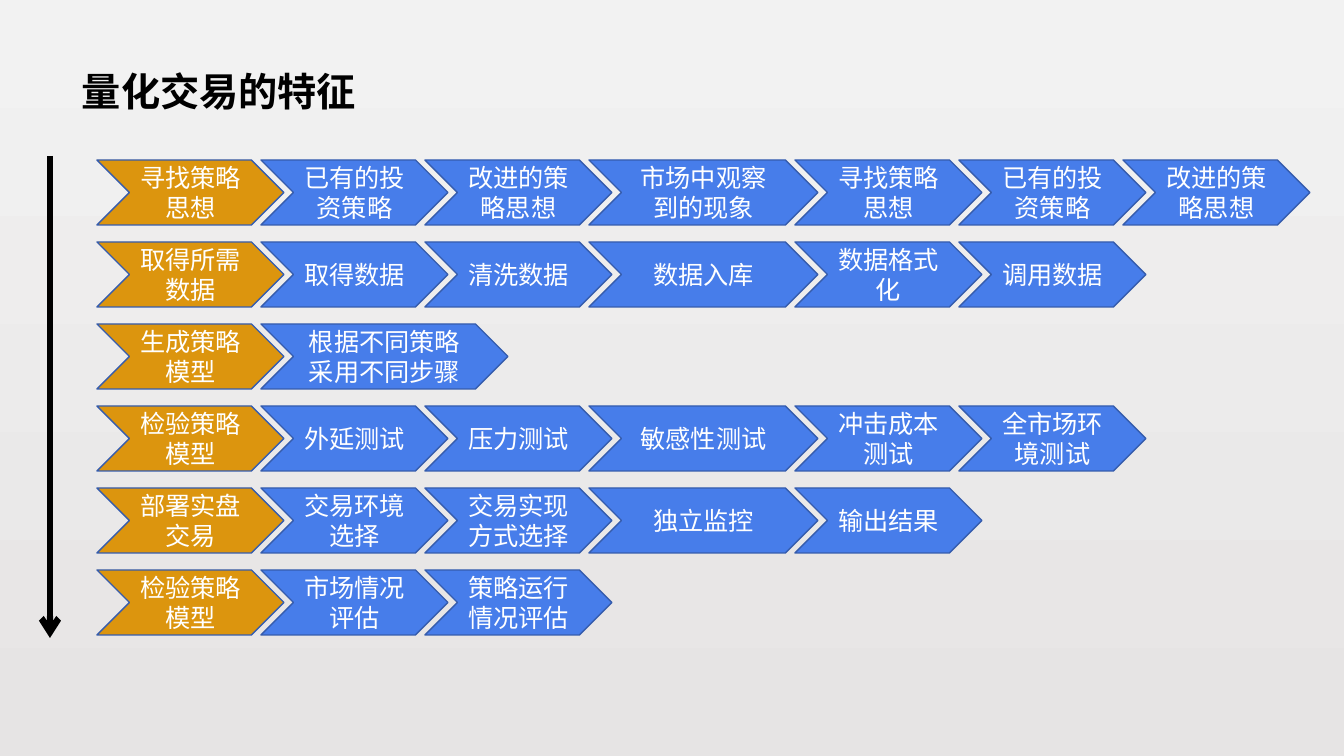
from lxml.etree import SubElement
from pptx import Presentation
from pptx.dml.color import RGBColor
from pptx.enum.shapes import MSO_CONNECTOR as Connector, MSO_SHAPE as Shape
from pptx.enum.text import MSO_ANCHOR as Anchor, PP_ALIGN as Align
from pptx.oxml.ns import qn
from pptx.util import Pt

EMU_PER_PX = 914400 / 100.8
BLACK = RGBColor(0x00, 0x00, 0x00)
WHITE = RGBColor(0xFF, 0xFF, 0xFF)
BLUE = RGBColor(0x47, 0x7D, 0xEA)
AMBER = RGBColor(0xDC, 0x95, 0x0E)
OUTLINE = RGBColor(0x35, 0x5C, 0xAD)
BACKDROP = RGBColor(0xF2, 0xF2, 0xF2), RGBColor(0xE6, 0xE4, 0xE4)

FIRST_LEFT, FIRST_TOP, ROW_PITCH = 97, 160, 82
STEP_WIDTH, STEP_HEIGHT, OVERLAP = 187, 65, 23
WIDE_STEPS = {"市场中观察到的现象": 229, "数据入库": 229, "敏感性测试": 229,
              "独立监控": 229, "根据不同策略采用不同步骤": 247}
STAGES = [
    ["寻找策略思想", "已有的投资策略", "改进的策略思想", "市场中观察到的现象",
     "寻找策略思想", "已有的投资策略", "改进的策略思想"],
    ["取得所需数据", "取得数据", "清洗数据", "数据入库", "数据格式化", "调用数据"],
    ["生成策略模型", "根据不同策略采用不同步骤"],
    ["检验策略模型", "外延测试", "压力测试", "敏感性测试", "冲击成本测试", "全市场环境测试"],
    ["部署实盘交易", "交易环境选择", "交易实现方式选择", "独立监控", "输出结果"],
    ["检验策略模型", "市场情况评估", "策略运行情况评估"],
]


def px(*lengths):
    """Turn pixel lengths into EMU."""
    return [round(length * EMU_PER_PX) for length in lengths]


class Deck:
    """Hold the style and the current slide, and draw its elements."""

    font_name = "Arial"

    def __init__(self, width, height):
        self.presentation = Presentation()
        self.presentation.slide_width, self.presentation.slide_height = px(width, height)
        self.slide = self.presentation.slides.add_slide(self.presentation.slide_layouts[6])

    def background(self, colors):
        fill = self.slide.background.fill
        fill.gradient()
        fill.gradient_angle = 270
        for position, (stop, color) in enumerate(zip(fill.gradient_stops, colors)):
            stop.color.rgb = color
            stop.position = position

    def set_text(self, frame, text, size, color, bold=False):
        frame.word_wrap = True
        frame.vertical_anchor = Anchor.MIDDLE
        paragraph = frame.paragraphs[0]
        paragraph.text = text
        font = paragraph.font
        font.name, font.size, font.bold = self.font_name, Pt(size), bold
        font.color.rgb = color
        return paragraph

    def title(self, text, left, top, width, height):
        heading = self.slide.shapes.add_textbox(*px(left, top, width, height))
        self.set_text(heading.text_frame, text, 28, BLACK, bold=True).line_spacing = 0.9

    def chevron(self, text, left, top, width, height, color):
        step = self.slide.shapes.add_shape(Shape.CHEVRON, *px(left, top, width, height))
        step.shadow.inherit = False
        step.fill.solid()
        step.fill.fore_color.rgb = color
        step.line.color.rgb = OUTLINE
        step.line.width = Pt(1)
        self.set_text(step.text_frame, text, 18, WHITE).alignment = Align.CENTER

    def arrow(self, x1, y1, x2, y2):
        flow = self.slide.shapes.add_connector(Connector.STRAIGHT, *px(x1, y1, x2, y2))
        flow.line.color.rgb = BLACK
        flow.line.width = Pt(4.5)
        properties = flow._element.spPr
        SubElement(properties.find(qn("a:ln")), qn("a:tailEnd"), type="arrow")
        SubElement(properties, qn("a:effectLst"))


def main():
    deck = Deck(1344, 756)
    deck.background(BACKDROP)
    deck.title("量化交易的特征", 72, 48, 1159, 92)
    for row, steps in enumerate(STAGES):
        left, top = FIRST_LEFT, FIRST_TOP + row * ROW_PITCH
        for column, step in enumerate(steps):
            width = WIDE_STEPS.get(step, STEP_WIDTH)
            deck.chevron(step, left, top, width, STEP_HEIGHT, BLUE if column else AMBER)
            left += width - OVERLAP
    deck.arrow(50, 156, 50, 638)
    deck.presentation.save("out.pptx")


if __name__ == "__main__":
    main()
